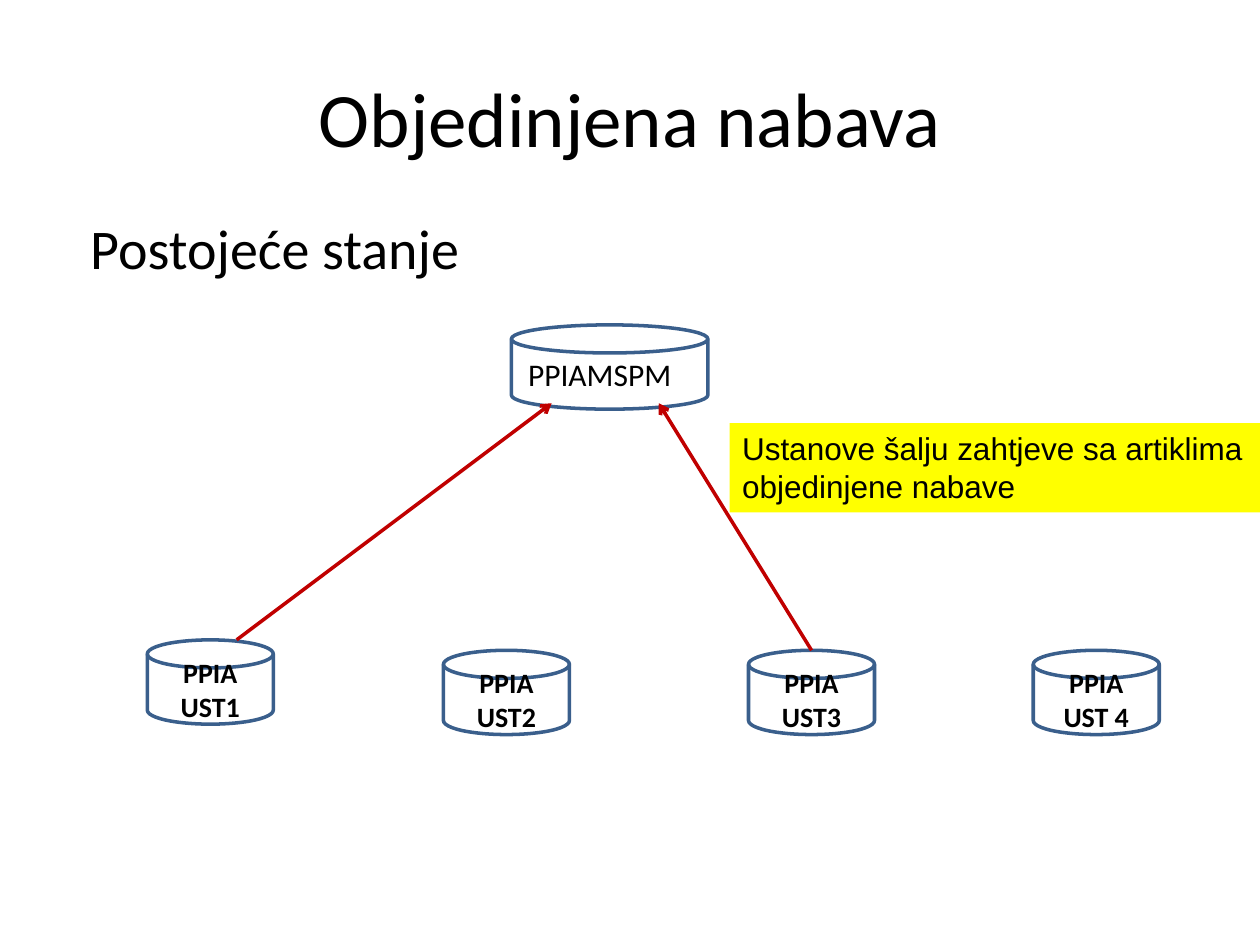
import pptx
import pptx.dml.color
import pptx.enum.shapes
import pptx.enum.text
import pptx.oxml
import pptx.util
from dataclasses import dataclass
from pptx.util import Cm, Pt

SHAPE = pptx.enum.shapes.MSO_SHAPE
ALIGN = pptx.enum.text.PP_ALIGN
ANCHOR = pptx.enum.text.MSO_ANCHOR


@dataclass(frozen=True)
class Theme:
    text: str = "000000"
    paper: str = "FFFFFF"
    outline: str = "3A5F8C"
    arrow: str = "C00000"
    highlight: str = "FFFF00"
    heading_font: str = "Calibri"
    note_font: str = "Arial"
    title_size: int = 44
    body_size: int = 32
    label_size: int = 18
    database_size: int = 16
    line_width: int = 2


THEME = Theme()


def rgb(value):
    return pptx.dml.color.RGBColor.from_string(value)


def write(shape, lines, size, font=THEME.heading_font, align=ALIGN.LEFT,
          anchor=ANCHOR.TOP, bold=False):
    frame = shape.text_frame
    frame.word_wrap = True
    frame.vertical_anchor = anchor
    frame.text = "\n".join(lines)
    for paragraph in frame.paragraphs:
        paragraph.alignment = align
        paragraph.font.name = font
        paragraph.font.size = Pt(size)
        paragraph.font.bold = bold
        paragraph.font.color.rgb = rgb(THEME.text)


def add_heading(slide, box, text, size, **style):
    heading = slide.shapes.add_textbox(*map(Cm, box))
    write(heading, [text], size, **style)


def add_panel(slide, kind, box, fill):
    panel = slide.shapes.add_shape(kind, *map(Cm, box))
    panel.shadow.inherit = False
    panel.fill.solid()
    panel.fill.fore_color.rgb = rgb(fill)
    return panel


def add_database(slide, box, label, size, bold):
    database = add_panel(slide, SHAPE.FLOWCHART_MAGNETIC_DISK, box, THEME.paper)
    database.line.color.rgb = rgb(THEME.outline)
    database.line.width = Pt(THEME.line_width)
    write(database, [label], size, align=ALIGN.CENTER, anchor=ANCHOR.MIDDLE, bold=bold)
    return database


def add_request_arrow(slide, start, end):
    arrow = slide.shapes.add_connector(
        pptx.enum.shapes.MSO_CONNECTOR.STRAIGHT, *map(Cm, start + end))
    arrow.line.color.rgb = rgb(THEME.arrow)
    arrow.line.width = Pt(THEME.line_width)
    line = arrow.line._get_or_add_ln()
    pptx.oxml.xmlchemy.OxmlElement
    head = pptx.oxml.xmlchemy.OxmlElement("a:tailEnd")
    head.set("type", "arrow")
    line.append(head)
    arrow._element.spPr.append(pptx.oxml.xmlchemy.OxmlElement("a:effectLst"))


def add_note(slide, box, lines):
    note = add_panel(slide, SHAPE.RECTANGLE, box, THEME.highlight)
    note.line.fill.background()
    write(note, lines, THEME.label_size, font=THEME.note_font)


def add_procurement_diagram(slide, box):
    left, top, width, height = box
    disk_width, disk_height = 2.54, 1.7

    # Central database, its label set a little left of centre
    hub_left, hub_width = left + 7.34, 3.96
    hub = add_database(slide, (hub_left, top, hub_width, disk_height),
                       "PPIAMSPM", THEME.label_size, False)
    hub.text_frame.margin_right = Cm(0.65)

    # Databases of the institutions, the first one slightly raised
    row_top = top + height - disk_height
    institutions = [("PPIA UST1", 0, -0.21), ("PPIA UST2", 5.97, 0),
                    ("PPIA UST3", 12.12, 0), ("PPIA UST 4", width - disk_width, 0)]
    for label, offset, lift in institutions:
        add_database(slide, (left + offset, row_top + lift, disk_width, disk_height),
                     label, THEME.database_size, True)

    # Requests sent to the central database
    hub_foot = top + 1.58
    add_request_arrow(slide, (left + 12.12 + disk_width / 2, row_top),
                      (hub_left + 2.97, hub_foot))
    add_request_arrow(slide, (left + 1.8, row_top - 0.21),
                      (hub_left + 0.81, hub_foot))


def main():
    presentation = pptx.Presentation()
    presentation.slide_width, presentation.slide_height = Cm(25.4), Cm(19.05)
    slide = presentation.slides.add_slide(presentation.slide_layouts[6])

    # Headings
    add_heading(slide, (1.27, 0.76, 22.86, 3.18), "Objedinjena nabava",
                THEME.title_size, align=ALIGN.CENTER, anchor=ANCHOR.MIDDLE)
    add_heading(slide, (1.57, 4.17, 22.86, 12.57), "Postojeće stanje", THEME.body_size)

    # Diagram and its explanation
    add_procurement_diagram(slide, (2.97, 6.55, 20.4, 8.26))
    add_note(slide, (14.71, 8.53, 10.69, 1.8),
             ["Ustanove šalju zahtjeve sa artiklima", "objedinjene nabave"])

    presentation.save("out.pptx")


if __name__ == "__main__":
    main()
